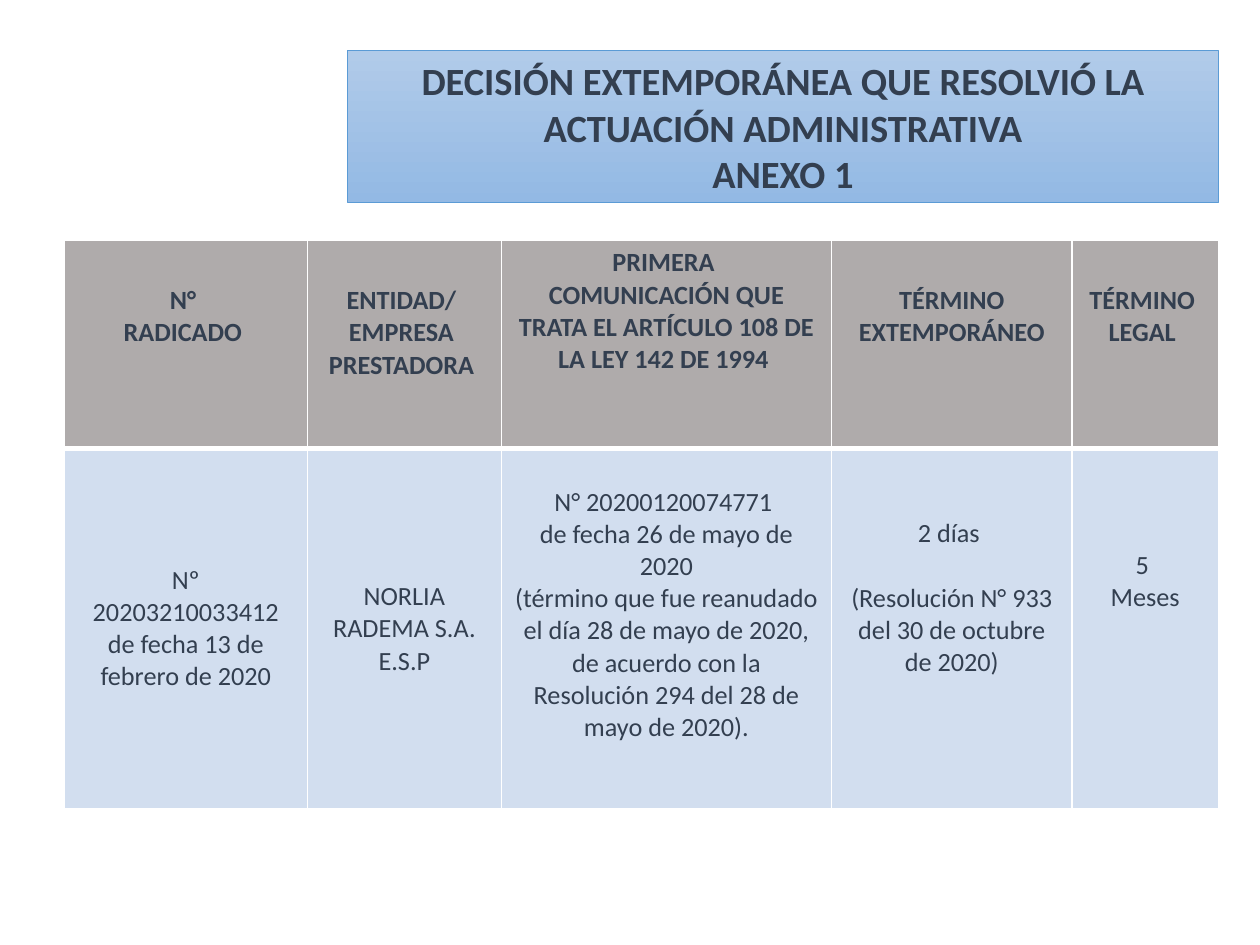
import pptx
import pptx.util
import pptx.dml.color
import pptx.enum.text
import lxml.etree
import pptx.oxml.ns

Inches, Pt = pptx.util.Inches, pptx.util.Pt
RGB = pptx.dml.color.RGBColor.from_string
MID = pptx.enum.text.MSO_ANCHOR.MIDDLE
TOP = pptx.enum.text.MSO_ANCHOR.TOP

THEME = {
    "font": "Calibri", "ink": "333F50", "white": "FFFFFF",
    "head": "AFABAB", "body": "D2DEEF",
    "grad": ("B1CBE9", "93B9E4"), "edge": "5B9BD5",
    "title": 22, "text": 15,
}
LINE = 0.25  # height of one line of table text, inches
PAD = 0.05

TITLE = ["DECISIÓN EXTEMPORÁNEA QUE RESOLVIÓ LA ACTUACIÓN ADMINISTRATIVA",
         "ANEXO 1"]
TITLE_BOX = (2.76, 0.4, 6.91, 1.21)
TABLE_AT = (0.51, 1.91)
COLS = [1.93, 1.54, 2.62, 1.91, 1.16]
ROWS = [1.65, 2.86]

# Each cell: lines of text, lines of room above it (None: centred in the cell)
HEAD = [
    (["N° ", "RADICADO "], 1.2),
    (["ENTIDAD/ ", "EMPRESA ", "PRESTADORA "], 1.2),
    (["PRIMERA ",
      "COMUNICACIÓN QUE TRATA EL ARTÍCULO 108 DE LA LEY 142 DE 1994 "], 0),
    (["TÉRMINO", "EXTEMPORÁNEO"], 1.2),
    (["TÉRMINO ", "LEGAL "], 1.2),
]
BODY = [
    (["Nº 20203210033412 de fecha 13 de febrero de 2020"], None),
    (["NORLIA RADEMA S.A. E.S.P"], 4),
    (["N° 20200120074771 ", "de fecha 26 de mayo de 2020",
      "(término que fue reanudado el día 28 de mayo de 2020, de acuerdo "
      "con la Resolución 294 del 28 de mayo de 2020)."], 1),
    (["2 días ", "(Resolución N° 933 del 30 de octubre de 2020)"], 2),
    (["5 ", "Meses"], 3),
]
GAPS = {(1, 3): 18.3}  # points between the paragraphs of a cell


def write(frame, lines, size, bold=False, gap=0):
    frame.word_wrap = True
    for i, line in enumerate(lines):
        para = frame.paragraphs[0] if i == 0 else frame.add_paragraph()
        para.alignment = pptx.enum.text.PP_ALIGN.CENTER
        para.space_before = Pt(gap if i else 0)
        run = para.add_run()
        run.text = line
        font = run.font
        font.name, font.size, font.bold = THEME["font"], Pt(size), bold
        font.color.rgb = RGB(THEME["ink"])


def border(cell, widths):
    """Draw white cell borders; widths maps L, R, T, B to points."""
    props = cell._tc.get_or_add_tcPr()
    add, tag = lxml.etree.SubElement, pptx.oxml.ns.qn
    for side, width in widths.items():
        line = add(props, tag(f"a:ln{side}"), w=str(Pt(width)))
        fill = add(line, tag("a:solidFill"))
        add(fill, tag("a:srgbClr"), val=THEME["white"])


def add_title(slide):
    box = slide.shapes.title
    box.left, box.top, box.width, box.height = map(Inches, TITLE_BOX)
    box.fill.gradient()
    box.fill.gradient_angle = 270
    for stop, color in zip(box.fill.gradient_stops, THEME["grad"]):
        stop.color.rgb = RGB(color)
    box.line.color.rgb = RGB(THEME["edge"])
    box.line.width = Pt(0.5)
    frame = box.text_frame
    frame.auto_size = pptx.enum.text.MSO_AUTO_SIZE.NONE
    frame.vertical_anchor = MID
    write(frame, TITLE, THEME["title"], bold=True)


def add_grid(slide):
    size = (sum(COLS), sum(ROWS))
    grid = slide.shapes.add_table(len(ROWS), len(COLS),
                                  *map(Inches, TABLE_AT + size)).table
    for col, width in zip(grid.columns, COLS):
        col.width = Inches(width)
    for row, height in zip(grid.rows, ROWS):
        row.height = Inches(height)
    for r, cells in enumerate((HEAD, BODY)):
        top = r == 0
        for c, (lines, room) in enumerate(cells):
            cell = grid.cell(r, c)
            cell.vertical_anchor = MID if room is None else TOP
            cell.margin_top = Inches(PAD + LINE * (room or 0))
            border(cell, {"L": 1, "R": 1, "T": 1 if top else 3,
                          "B": 3 if top else 1})
            cell.fill.solid()
            cell.fill.fore_color.rgb = RGB(THEME["head" if top else "body"])
            write(cell.text_frame, lines, THEME["text"], bold=top,
                  gap=GAPS.get((r, c), 0))


def main():
    deck = pptx.Presentation()
    deck.slide_width, deck.slide_height = Inches(10), Inches(7.5)
    slide = deck.slides.add_slide(deck.slide_layouts.get_by_name("Title Only"))
    add_title(slide)
    add_grid(slide)
    deck.save("out.pptx")


if __name__ == "__main__":
    main()
